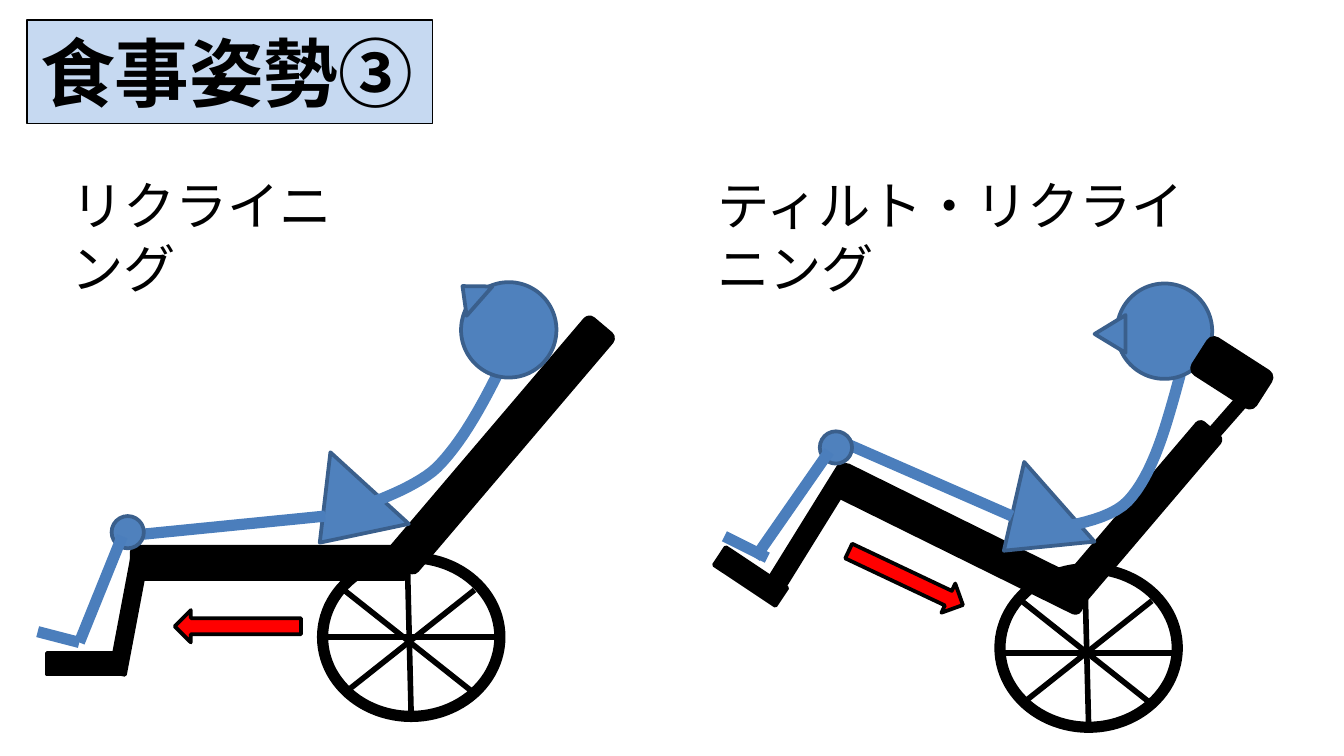
"""Builds a slide comparing reclining and tilt-reclining wheelchair postures."""
from lxml.etree import SubElement
from pptx import Presentation
from pptx.dml.color import RGBColor
from pptx.enum.shapes import MSO_CONNECTOR, MSO_SHAPE as Shape
from pptx.enum.text import MSO_AUTO_SIZE, PP_ALIGN
from pptx.oxml.ns import qn
from pptx.util import Pt

TITLE = ("食事姿勢③", 14.4, 10.8, 217.4, 55.4)
LABELS = [
    ("リクライニング", 31, 89.3, 181.4, 41),
    ("ティルト・リクライニング", 377.3, 89.3, 285.8, 41),
]

BLACK, RED, BLUE, EDGE, LIMB = "000000", "FF0000", "4F81BD", "3A5F8C", "4B7EBC"
LOOKS = {
    "seat": (Shape.ROUNDED_RECTANGLE, BLACK, BLACK),
    "back": (Shape.ROUNDED_RECTANGLE, BLACK, BLACK),
    "headrest": (Shape.ROUNDED_RECTANGLE, BLACK, BLACK),
    "leg rest": (Shape.RECTANGLE, BLACK, BLACK),
    "footrest": (Shape.RECTANGLE, BLACK, BLACK),
    "post": (Shape.RECTANGLE, BLACK, BLACK),
    "hips": (Shape.ISOSCELES_TRIANGLE, BLUE, EDGE),
    "nose": (Shape.ISOSCELES_TRIANGLE, BLUE, EDGE),
    "head": (Shape.OVAL, BLUE, EDGE),
    "knee": (Shape.OVAL, BLUE, EDGE),
    "arrow": (Shape.LEFT_ARROW, RED, BLACK),
}
LIMBS = ("thigh", "shin", "foot")

RECLINING = {
    "seat": (70.6, 293, 148.3, 17.3, 0),
    "back": (185, 229, 167, 18.7, 310.4),
    "wheel": (172.8, 298.8, 42.5),
    "hips": (156.2, 256.3, 56.9, 39.6, 222.4),
    "spine": [(267.8, 198), (257.8, 218.2), (247, 237.6), (234, 250.6),
              (221, 262.8), (190.8, 272.2), (190.8, 272.2)],
    "head": (247, 151.2, 51.1, 51.1, 16.2),
    "thigh": (174.2, 276.5, 65.5, 287.3),
    "leg rest": (65.5, 293, 7.9, 68.4, 10.7),
    "knee": (59.8, 276.5, 17.3, 17.3, 0),
    "shin": (65.5, 287.3, 42.5, 344.2),
    "footrest": (25.2, 349.9, 39.6, 11.5, 0),
    "nose": (241.9, 151.2, 20.9, 12.2, 311.4),
    "arrow": (93.6, 326.9, 67.7, 17.3, 0),
    "foot": (20.2, 338.4, 42.5, 344.2),
}
TILTED = {
    "seat": (440.6, 280.1, 148.3, 17.3, 26.3),
    "back": (548.6, 268.6, 121.7, 15.8, 310.4),
    "wheel": (535.7, 304.6, 45.4),
    "hips": (524.2, 262.1, 56.9, 39.6, 228.6),
    "spine": [(632.2, 200.9), (625, 227.5), (617.8, 254.2), (604.1, 268.6),
              (591.1, 282.2), (551.5, 284.4), (551.5, 284.4)],
    "head": (598.3, 151.9, 51.1, 51.1, 16.2),
    "thigh": (542.2, 276.5, 450, 236.2),
    "leg rest": (429.8, 244.8, 9.4, 75.6, 31.8),
    "knee": (439.2, 231.1, 17.3, 17.3, 0),
    "shin": (444.2, 241.9, 404.6, 298.8),
    "footrest": (382.3, 303.1, 39.6, 11.5, 33.6),
    "nose": (584.6, 170.6, 20.2, 16.6, 270),
    "foot": (388.1, 287.3, 411.1, 298.8),
    "post": (645.8, 218.2, 28.1, 5.8, 311.3),
    "headrest": (640.1, 188.6, 39.6, 22.3, 32.7),
    "arrow": (451.4, 301, 67.7, 17.3, 205.3),
}


def rgb(color):
    return RGBColor.from_string(color)


def style(sp, fill, line, weight):
    sp.shadow.inherit = False
    if fill:
        sp.fill.solid()
        sp.fill.fore_color.rgb = rgb(fill)
    else:
        sp.fill.background()
    sp.line.color.rgb = rgb(line)
    sp.line.width = Pt(weight)


def add_part(s, preset, fill, line, box, rotation=0, weight=2):
    sp = s.shapes.add_shape(preset, *map(Pt, box))
    sp.rotation = rotation
    style(sp, fill, line, weight)
    return sp


def add_line(s, ends, color, weight):
    cx = s.shapes.add_connector(MSO_CONNECTOR.STRAIGHT, *map(Pt, ends))
    cx.line.color.rgb = rgb(color)
    cx.line.width = Pt(weight)
    SubElement(cx._element.spPr, qn("a:effectLst"))


def add_wheel(s, x, y, hub, w=95, h=85):
    add_part(s, Shape.OVAL, None, BLACK, (x, y, w, h), weight=6)
    left, right, top, bottom = x + 11.5, x + 81.4, y + 17.3, y + 72.7
    for spoke in [(x + 45.4, y, x + 47.5, y + h), (x, y + hub, x + w, y + hub),
                  (left, bottom, right, top), (left, top, right, bottom)]:
        add_line(s, spoke, BLACK, 3)


def bezier(a, b, c, d, steps=16):
    for i in range(1, steps + 1):
        t = i / steps
        u = 1 - t
        yield tuple(Pt(u**3 * k + 3 * u * u * t * m + 3 * u * t * t * n + t**3 * q)
                    for k, m, n, q in zip(a, b, c, d))


def add_spine(s, pts):
    fb = s.shapes.build_freeform(*map(Pt, pts[0]))
    for i in (0, 3):
        fb.add_line_segments(list(bezier(*pts[i:i + 4])), close=False)
    style(fb.convert_to_shape(), None, BLUE, 6)


def add_chair(s, chair):
    for name, place in chair.items():
        if name == "wheel":
            add_wheel(s, *place)
        elif name == "spine":
            add_spine(s, place)
        elif name in LIMBS:
            add_line(s, place, LIMB, 6)
        else:
            add_part(s, *LOOKS[name], place[:4], place[4])


def set_text(sp, text, size, wrap, bold=False):
    tf = sp.text_frame
    tf.word_wrap = wrap
    tf.auto_size = MSO_AUTO_SIZE.SHAPE_TO_FIT_TEXT
    p = tf.paragraphs[0]
    p.text = text
    p.alignment = PP_ALIGN.LEFT
    p.font.name = "Calibri"
    p.font.size = Pt(size)
    p.font.bold = bold
    p.font.color.rgb = rgb(BLACK)


def main():
    prs = Presentation()
    prs.slide_width, prs.slide_height = Pt(720), Pt(405)
    s = prs.slides.add_slide(prs.slide_layouts[6])
    text, *box = TITLE
    sp = add_part(s, Shape.RECTANGLE, "C6D9F1", BLACK, box, weight=0.75)
    set_text(sp, text, 40, False, True)
    for chair in (RECLINING, TILTED):
        add_chair(s, chair)
    for text, *box in LABELS:
        set_text(s.shapes.add_textbox(*map(Pt, box)), text, 28, True)
    prs.save("out.pptx")


if __name__ == "__main__":
    main()
